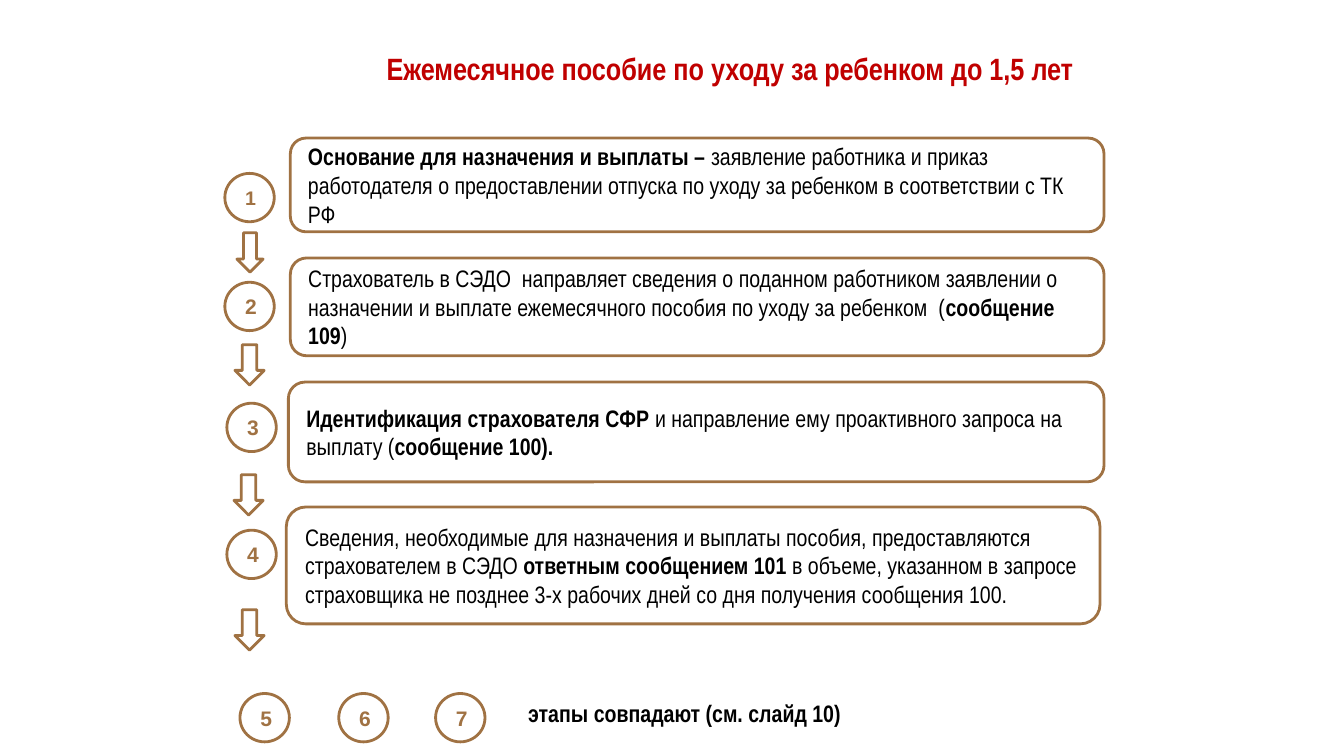
import pptx
import pptx.dml.color
import pptx.enum.shapes
import pptx.enum.text
import pptx.util

PX = 9144  # EMU in one px, 100 px to the inch
KIND = pptx.enum.shapes.MSO_SHAPE
ALIGN = pptx.enum.text.PP_ALIGN
ANCHOR = pptx.enum.text.MSO_ANCHOR
BROWN, RED, BLACK = "A07243", "C00000", "000000"
NARROW = "Arial Narrow"


def paint(code):
    return pptx.dml.color.RGBColor.from_string(code)


def apply(item, values):
    for name, value in values.items():
        setattr(item, name, value)


class Page:
    frame = {
        "margin_left": 13 * PX, "margin_right": 13 * PX,
        "margin_top": 7 * PX, "margin_bottom": 7 * PX,
        "word_wrap": True,
    }

    def __init__(self, deck):
        self.slide = deck.slides.add_slide(deck.slide_layouts[5])

    def label(self, shape, runs, size, face, color, align, anchor=ANCHOR.MIDDLE):
        """Fill one paragraph with (text, bold) runs."""
        apply(shape.text_frame, {**self.frame, "vertical_anchor": anchor})
        para = shape.text_frame.paragraphs[0]
        para.alignment = align
        for text, bold in runs:
            run = para.add_run()
            run.text = text
            apply(run.font, {"size": pptx.util.Pt(size), "name": face, "bold": bold})
            run.font.color.rgb = paint(color)
        return para

    def title(self, text, left, top, width, height):
        shape = self.slide.shapes.title
        apply(shape, {"left": left * PX, "top": top * PX,
                      "width": width * PX, "height": height * PX})
        para = self.label(shape, [(text, True)], 22, NARROW, RED,
                          ALIGN.CENTER, ANCHOR.BOTTOM)
        para.line_spacing = 0.9
        shape.text_frame.auto_size = pptx.enum.text.MSO_AUTO_SIZE.NONE

    def shape(self, kind, left, top, width, height, edge=True):
        shape = self.slide.shapes.add_shape(
            kind, left * PX, top * PX, width * PX, height * PX)
        shape.shadow.inherit = False
        shape.fill.background()
        if edge:
            shape.line.color.rgb = paint(BROWN)
            shape.line.width = pptx.util.Pt(2)
        else:
            shape.line.fill.background()
        return shape

    def badge(self, mark, left, top, size=15):
        shape = self.shape(KIND.OVAL, left, top, 49, 48)
        self.label(shape, [(mark, True)], size, "Arial", BROWN, ALIGN.CENTER)

    def arrow(self, left, top, width, height):
        self.shape(KIND.DOWN_ARROW, left, top, width, height)

    def box(self, runs, left, top, width, height, edge=True):
        shape = self.shape(KIND.ROUNDED_RECTANGLE, left, top, width, height, edge)
        self.label(shape, runs, 17, NARROW, BLACK, ALIGN.LEFT)


# Each step: badge (left, top, text size), box place, arrow place, text runs
STEPS = [
    ((223, 172, 14), (288, 137, 807, 93), (235, 231, 26, 39), [
        ("Основание для назначения и выплаты – ", True),
        ("заявление работника и приказ работодателя о предоставлении отпуска "
         "по уходу за ребенком в соответствии с ТК РФ", False)]),
    ((223, 280, 15), (288, 256, 807, 97), (233, 342, 29, 40), [
        ("Страхователь в СЭДО  направляет сведения о поданном работником "
         "заявлении о назначении и выплате ежемесячного пособия по уходу "
         "за ребенком  (", False),
        ("сообщение 109", True),
        (")", False)]),
    ((225, 400, 15), (286, 379, 809, 99), (232, 471, 29, 40), [
        ("Идентификация страхователя СФР ", True),
        ("и направление ему проактивного запроса на выплату (", False),
        ("сообщение 100).", True)]),
    ((225, 526, 15), (284, 503, 807, 116), (233, 605, 29, 40), [
        ("Сведения, необходимые для назначения и выплаты пособия, "
         "предоставляются страхователем в СЭДО ", False),
        ("ответным сообщением 101 ", True),
        ("в объеме, указанном в запросе страховщика не позднее 3-х рабочих "
         "дней со дня получения сообщения 100.", False)]),
]


def main():
    deck = pptx.Presentation()
    apply(deck, {"slide_width": 1333 * PX, "slide_height": 750 * PX})
    page = Page(deck)
    page.title("Ежемесячное пособие по уходу за ребенком до 1,5 лет",
               367, 61, 714, 33)
    for number, (badge, box, arrow, runs) in enumerate(STEPS, 1):
        page.badge(str(number), *badge)
        page.box(runs, *box)
        page.arrow(*arrow)
    for number, left in enumerate((238, 336, 432), len(STEPS) + 1):
        page.badge(str(number), left, 688)
    page.box([("этапы совпадают (см. слайд 10)", True)],
             509, 688, 403, 38, edge=False)
    deck.save("out.pptx")


if __name__ == "__main__":
    main()
